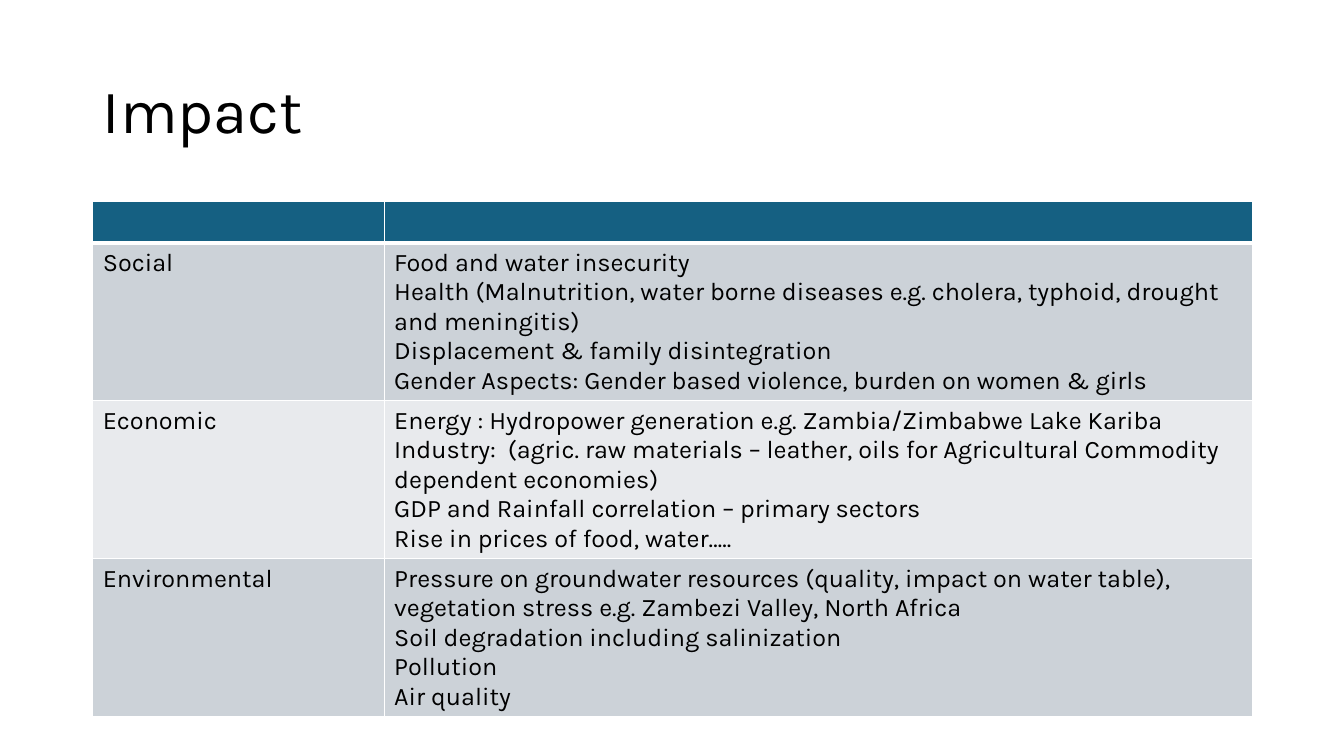
from pptx import Presentation
from pptx.dml.color import RGBColor
from pptx.enum.text import MSO_ANCHOR, MSO_AUTO_SIZE, PP_ALIGN
from pptx.oxml import parse_xml
from pptx.oxml.ns import nsdecls
from pptx.util import Inches, Pt

FONT = "Karla"
BLACK = RGBColor(0x00, 0x00, 0x00)
TEAL = RGBColor(0x15, 0x60, 0x82)
GREY = RGBColor(0xCC, 0xD2, 0xD8)
PALE = RGBColor(0xE8, 0xEA, 0xED)

ROWS = [
    ("", []),
    ("Social", [
        "Food and water insecurity",
        "Health (Malnutrition, water borne diseases e.g. cholera, typhoid, drought and meningitis)",
        "Displacement & family disintegration",
        "Gender Aspects: Gender based violence, burden on women & girls",
    ]),
    ("Economic", [
        "Energy : Hydropower generation e.g. Zambia/Zimbabwe Lake Kariba",
        "Industry:  (agric. raw materials – leather, oils for Agricultural Commodity dependent economies)",
        "GDP and Rainfall correlation – primary sectors",
        "Rise in prices of food, water…..",
    ]),
    ("Environmental", [
        "Pressure on groundwater resources (quality, impact on water table), "
        "vegetation stress e.g. Zambezi Valley, North Africa",
        "Soil degradation including salinization",
        "Pollution",
        "Air quality",
    ]),
]


def style(par, size):
    par.font.name = FONT
    par.font.size = Pt(size)
    par.font.color.rgb = BLACK


def border(cell, side, width):
    cell._tc.get_or_add_tcPr().append(parse_xml(
        f'<a:ln{side} {nsdecls("a")} w="{Pt(width)}"><a:solidFill>'
        f'<a:srgbClr val="FFFFFF"/></a:solidFill></a:ln{side}>'))


prs = Presentation()
prs.slide_width, prs.slide_height = Inches(13.33), Inches(7.5)
slide = prs.slides.add_slide(prs.slide_layouts[5])

# Title
title = slide.shapes.title
title.left, title.top = Inches(0.92), Inches(0.4)
title.width, title.height = Inches(11.5), Inches(1.45)
frame = title.text_frame
frame.text = "Impact"
frame.auto_size = MSO_AUTO_SIZE.NONE
frame.vertical_anchor = MSO_ANCHOR.MIDDLE
head = frame.paragraphs[0]
head.alignment = PP_ALIGN.LEFT
head.line_spacing = 0.9
style(head, 44)

# Impact table
table = slide.shapes.add_table(
    len(ROWS), 2, Inches(0.92), Inches(2), Inches(11.5), Inches(1.64)).table
for col, width in zip(table.columns, (2.89, 8.61)):
    col.width = Inches(width)

for r, (label, points) in enumerate(ROWS):
    table.rows[r].height = Inches(0.41 if r == 0 else 1.56)
    for c, text in enumerate((label, "\n".join(points))):
        cell = table.cell(r, c)
        cell.text = text
        for par in cell.text_frame.paragraphs:
            style(par, 18)
        # White rules, thicker under the header
        for side in "LRTB":
            thick = (r, side) in ((0, "B"), (1, "T"))
            border(cell, side, 3 if thick else 1)
        cell.fill.solid()
        cell.fill.fore_color.rgb = TEAL if r == 0 else GREY if r % 2 else PALE

prs.save("out.pptx")
